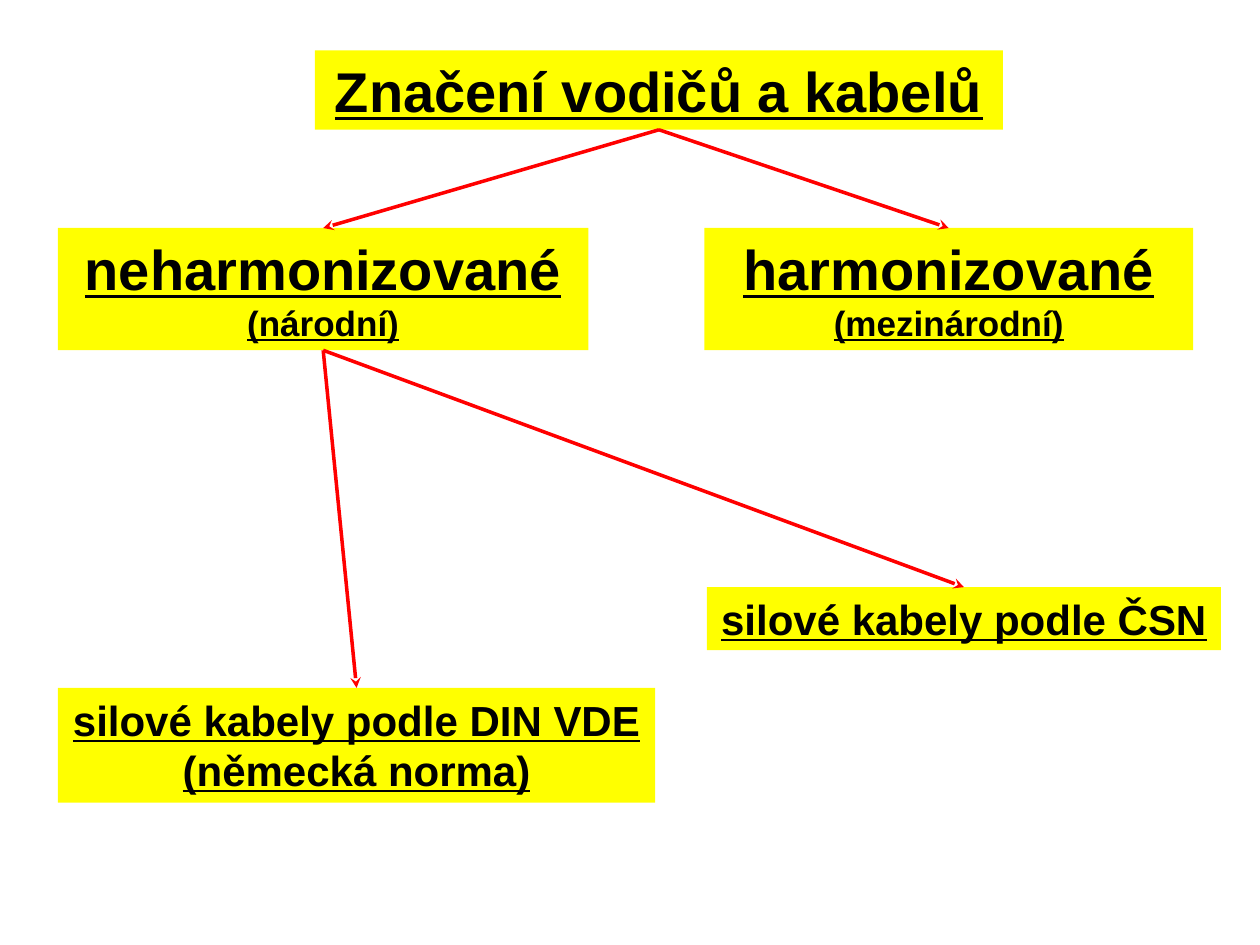
from lxml.etree import SubElement
from pptx import Presentation
from pptx.dml.color import RGBColor
from pptx.enum.shapes import MSO_CONNECTOR, MSO_SHAPE
from pptx.enum.text import MSO_ANCHOR, MSO_AUTO_SIZE, PP_ALIGN
from pptx.oxml.ns import qn
from pptx.util import Inches, Pt

YELLOW = RGBColor(0xFF, 0xFF, 0x00)
RED = RGBColor(0xFF, 0x00, 0x00)
BLACK = RGBColor(0x00, 0x00, 0x00)
TOP, BOTTOM = 0, 2
COLS, ROWS = 100, 75


def add_text(p, text, size=24, font="Arial", color=BLACK):
    """Write one bold, underlined, centred line into a paragraph."""
    p.alignment = PP_ALIGN.CENTER
    r = p.add_run()
    r.text = text
    r.font.name = font
    r.font.size = Pt(size)
    r.font.bold = r.font.underline = True
    r.font.color.rgb = color


class Diagram:
    """Boxes and arrows on a slide, placed by grid columns and rows."""

    def __init__(self, prs, fill=YELLOW, line=RED, weight=2):
        self.s = prs.slides.add_slide(prs.slide_layouts[6])
        self.col = prs.slide_width / COLS
        self.row = prs.slide_height / ROWS
        self.fill, self.line, self.weight = fill, line, weight

    def box(self, col, row, cols, rows, *lines):
        sp = self.s.shapes.add_shape(
            MSO_SHAPE.RECTANGLE,
            round(col * self.col), round(row * self.row),
            round(cols * self.col), round(rows * self.row))
        sp.shadow.inherit = False
        sp.fill.solid()
        sp.fill.fore_color.rgb = self.fill
        sp.line.fill.background()
        tf = sp.text_frame
        tf.word_wrap = True
        tf.auto_size = MSO_AUTO_SIZE.SHAPE_TO_FIT_TEXT
        tf.vertical_anchor = MSO_ANCHOR.TOP
        for i, (text, size) in enumerate(lines):
            p = tf.add_paragraph() if i else tf.paragraphs[0]
            add_text(p, text, size=size)
        return sp

    def arrow(self, parent, child):
        c = self.s.shapes.add_connector(MSO_CONNECTOR.STRAIGHT, 0, 0, 0, 0)
        c.begin_connect(parent, BOTTOM)
        c.end_connect(child, TOP)
        c.line.color.rgb = self.line
        c.line.width = Pt(self.weight)
        SubElement(c.line._get_or_add_ln(), qn("a:tailEnd"), type="stealth")
        SubElement(c._element.spPr, qn("a:effectLst"))


def main():
    prs = Presentation()
    prs.slide_width, prs.slide_height = Inches(10), Inches(7.5)
    d = Diagram(prs)

    # Title and the two families of cables
    title = d.box(25, 4, 54.6, 6.3, ("Značení vodičů a kabelů", 32))
    national = d.box(4.6, 18.1, 42.1, 9.7,
                     ("neharmonizované", 32), ("(národní)", 20))
    international = d.box(55.9, 18.1, 38.8, 9.7,
                          ("harmonizované", 32), ("(mezinárodní)", 20))

    # Standards for power cables
    csn = d.box(56.1, 46.6, 40.8, 5, ("silové kabely podle ČSN", 24))
    din = d.box(4.6, 54.6, 47.4, 9.1,
                ("silové kabely podle DIN VDE (německá norma)", 24))

    # Arrows from each parent to its children
    for parent, children in ((title, (national, international)),
                             (national, (csn, din))):
        for child in children:
            d.arrow(parent, child)

    prs.save("out.pptx")


if __name__ == "__main__":
    main()
